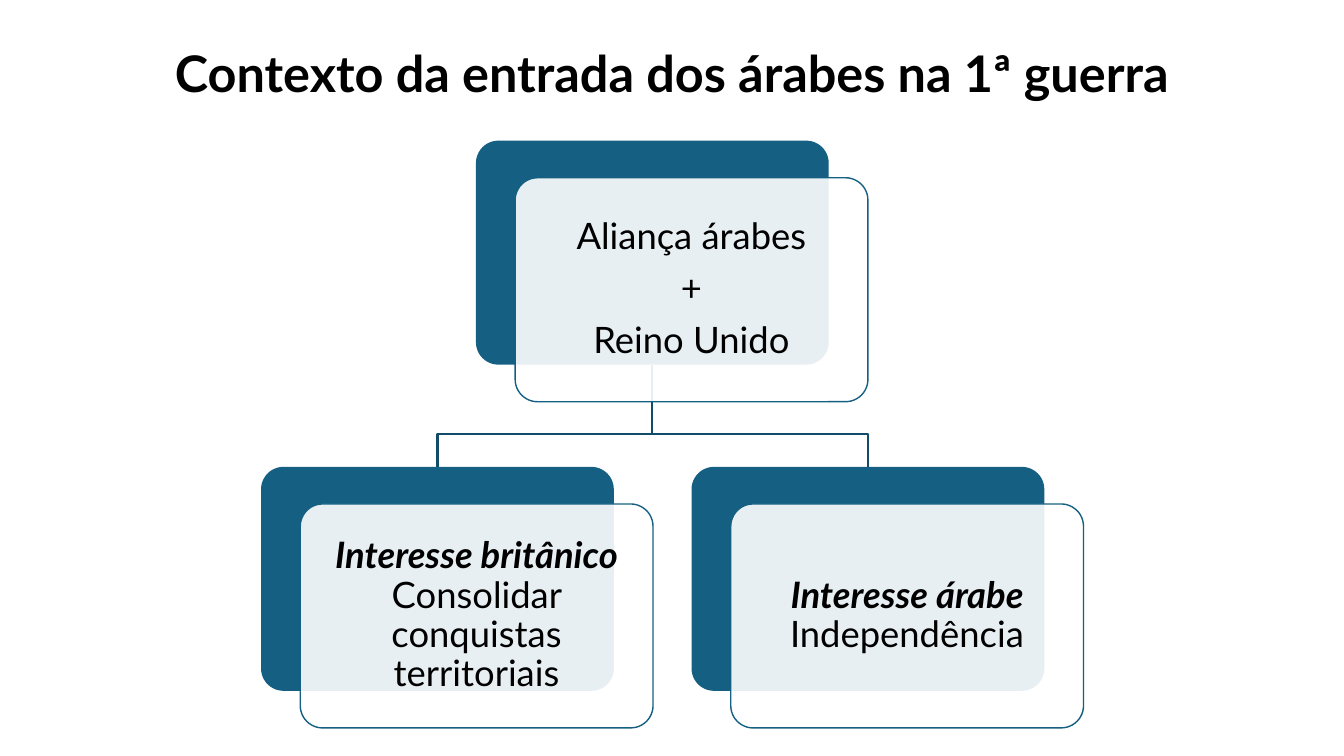
from dataclasses import dataclass

from lxml.etree import SubElement
from pptx import Presentation
from pptx.dml.color import RGBColor
from pptx.enum.shapes import MSO_SHAPE as Preset
from pptx.enum.text import MSO_ANCHOR as Anchor, PP_ALIGN as Align
from pptx.oxml.ns import qn
from pptx.util import Pt

FONT = "Lato"
BLACK, WHITE, BLUE, DARK_BLUE = "000000", "FFFFFF", "156082", "114D68"
CARD_WIDTH, CARD_HEIGHT = 252, 160
SHIFT_X, SHIFT_Y = 28, 26.5
CORNER = 0.1
INSET = 8


@dataclass
class Card:
    left: float
    top: float
    paragraphs: list[str]
    heading: str = ""

    @property
    def center(self) -> float:
        return self.left + CARD_WIDTH / 2


ALLIANCE = Card(340, 100.5, ["Aliança árabes", "+", "Reino Unido"])
INTERESTS = [
    Card(186.5, 333.5, ["Consolidar conquistas territoriais"], "Interesse britânico "),
    Card(494, 333.5, ["Independência"], "Interesse árabe "),
]


def color(value: str) -> RGBColor:
    return RGBColor.from_string(value)


def style_paragraph(paragraph, size: float, bold: bool = False) -> None:
    paragraph.alignment = Align.CENTER
    paragraph.line_spacing = 0.9
    paragraph.font.name = FONT
    paragraph.font.size = Pt(size)
    paragraph.font.bold = bold
    paragraph.font.color.rgb = color(BLACK)


def add_title(slide, text: str) -> None:
    box = slide.shapes.add_textbox(Pt(66), Pt(28.75), Pt(828), Pt(52))
    frame = box.text_frame
    frame.word_wrap = True
    frame.vertical_anchor = Anchor.MIDDLE
    paragraph = frame.paragraphs[0]
    paragraph.text = text
    style_paragraph(paragraph, 36, bold=True)


def add_branch(slide, parent: Card, child: Card) -> None:
    """Draw the elbow line from the parent card down to the child card."""
    bend = child.top - 23.5
    builder = slide.shapes.build_freeform(Pt(parent.center), Pt(parent.top + CARD_HEIGHT))
    corners = [(parent.center, bend), (child.center, bend), (child.center, child.top)]
    builder.add_line_segments([(Pt(x), Pt(y)) for x, y in corners], close=False)
    shape = builder.convert_to_shape()
    shape.shadow.inherit = False
    shape.fill.background()
    shape.line.color.rgb = color(DARK_BLUE)
    shape.line.width = Pt(1.5)


def add_panel(slide, left: float, top: float, fill: str):
    shape = slide.shapes.add_shape(
        Preset.ROUNDED_RECTANGLE, Pt(left), Pt(top), Pt(CARD_WIDTH), Pt(CARD_HEIGHT)
    )
    shape.adjustments[0] = CORNER
    shape.shadow.inherit = False
    shape.fill.solid()
    shape.fill.fore_color.rgb = color(fill)
    return shape


def set_opacity(shape, percent: int) -> None:
    fill_color = shape.fill._xPr.find(qn("a:solidFill"))[0]
    SubElement(fill_color, qn("a:alpha"), val=str(percent * 1000))


def add_card(slide, card: Card) -> None:
    back = add_panel(slide, card.left, card.top, BLUE)
    back.line.fill.background()

    front = add_panel(slide, card.left + SHIFT_X, card.top + SHIFT_Y, WHITE)
    set_opacity(front, 90)
    front.line.color.rgb = color(BLUE)
    front.line.width = Pt(1)

    frame = front.text_frame
    frame.word_wrap = True
    frame.vertical_anchor = Anchor.MIDDLE
    frame.margin_left = frame.margin_right = Pt(INSET)
    frame.margin_top = frame.margin_bottom = Pt(INSET)
    for index, text in enumerate(card.paragraphs):
        paragraph = frame.add_paragraph() if index else frame.paragraphs[0]
        style_paragraph(paragraph, 26)
        paragraph.space_after = Pt(9)
        if card.heading and index == 0:
            heading = paragraph.add_run()
            heading.text = card.heading
            heading.font.bold = heading.font.italic = True
        paragraph.add_run().text = text


def main() -> None:
    presentation = Presentation()
    presentation.slide_width, presentation.slide_height = Pt(960), Pt(540)
    slide = presentation.slides.add_slide(presentation.slide_layouts[6])

    add_title(slide, "Contexto da entrada dos árabes na 1ª guerra")
    for interest in INTERESTS:
        add_branch(slide, ALLIANCE, interest)
    for card in [ALLIANCE, *INTERESTS]:
        add_card(slide, card)

    presentation.save("out.pptx")


if __name__ == "__main__":
    main()
